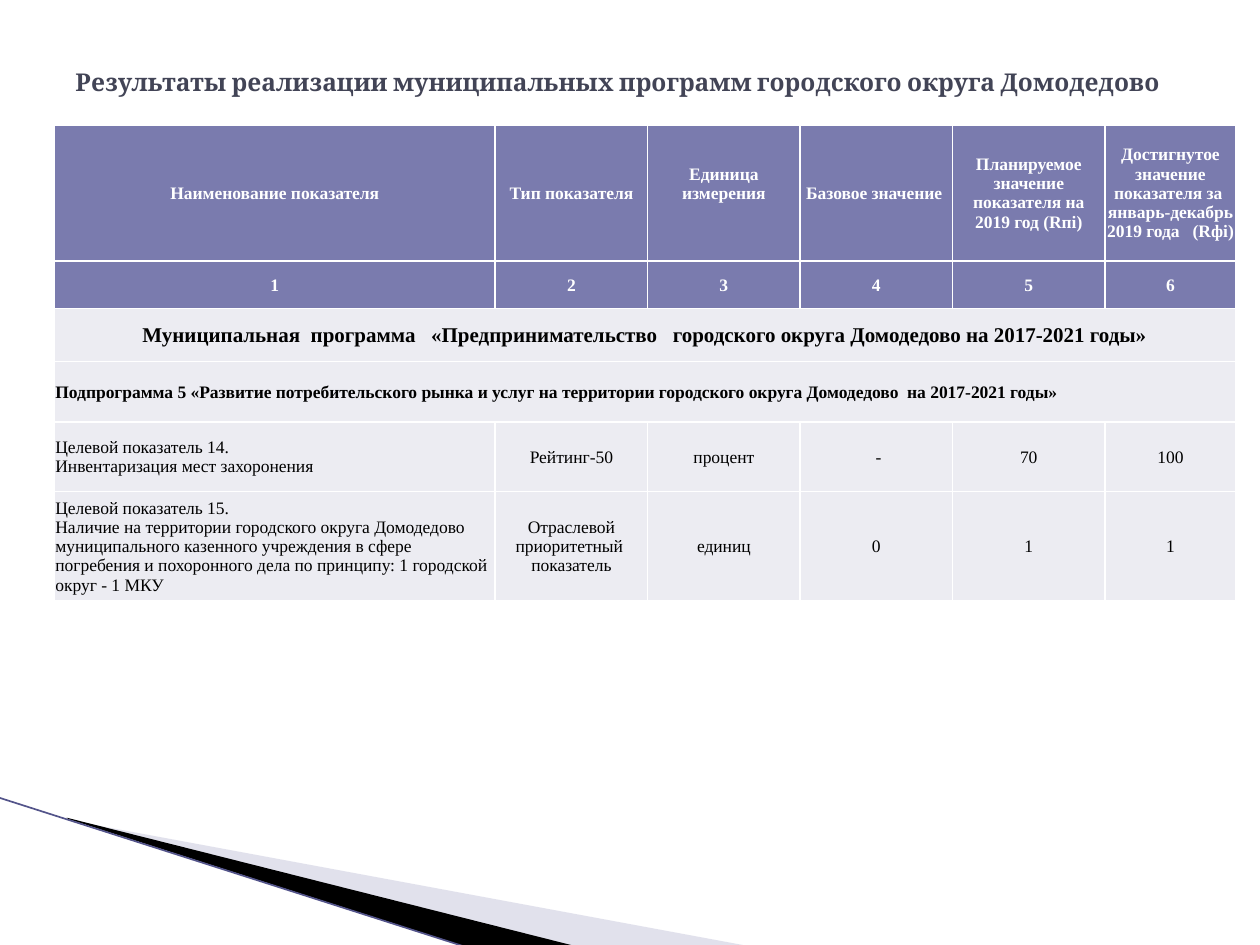
"""Build a slide with the results table of the municipal programmes."""
from dataclasses import dataclass

from lxml import etree
from pptx import Presentation
from pptx.dml.color import RGBColor
from pptx.enum.shapes import MSO_CONNECTOR
from pptx.enum.text import MSO_ANCHOR, PP_ALIGN
from pptx.oxml.ns import qn
from pptx.util import Inches, Pt

STRAIGHT = MSO_CONNECTOR.STRAIGHT
MIDDLE = MSO_ANCHOR.MIDDLE
LEFT, CENTER = PP_ALIGN.LEFT, PP_ALIGN.CENTER

COLUMN_WIDTHS = [3.5, 1.21, 1.21, 1.21, 1.21, 1.04]
ROW_HEIGHTS = [1.08, 0.38, 0.42, 0.48, 0.55, 0.87]
HEADINGS = [
    "Наименование показателя",
    "Тип показателя",
    "Единица измерения",
    "Базовое значение ",
    "Планируемое значение показателя на 2019 год (Rпi)",
    "Достигнутое значение показателя за  январь-декабрь 2019 года   (Rфi)",
]
PROGRAMME = ("Муниципальная  программа   «Предпринимательство   "
             "городского округа Домодедово на 2017-2021 годы»")
SUBPROGRAMME = ("Подпрограмма 5 «Развитие потребительского рынка и услуг на территории "
                "городского округа Домодедово  на 2017-2021 годы»")
INDICATORS = [
    ["Целевой показатель 14.\nИнвентаризация мест захоронения",
     "Рейтинг-50", "процент", " -", "70", "100"],
    ["Целевой показатель 15.\nНаличие на территории городского округа Домодедово "
     "муниципального казенного учреждения в сфере погребения и похоронного дела "
     "по принципу: 1 городской округ - 1 МКУ",
     "Отраслевой приоритетный  показатель", "единиц", "0", "1", "1"],
]


@dataclass(frozen=True)
class Theme:
    """Colours, fonts and type sizes of the slide."""
    title_font: str = "Cambria"
    table_font: str = "Times New Roman"
    title_size: int = 14
    programme_size: int = 12
    table_size: int = 10
    title: str = "424456"
    header: str = "7A7BAE"
    body: str = "ECECF2"
    white: str = "FFFFFF"
    black: str = "000000"
    pale: str = "B6B6D1"
    edge: str = "53548A"


class SlideBuilder:
    """Hold the theme and the current slide, and draw each kind of element."""

    def __init__(self, slide, theme):
        """Keep the slide and the theme."""
        self.slide = slide
        self.theme = theme

    def set_text(self, text_frame, text, font, size, color, bold, align=LEFT):
        """Fill a text frame and format its paragraphs and runs."""
        text_frame.text = text
        text_frame.word_wrap = True
        for paragraph in text_frame.paragraphs:
            paragraph.alignment = align
            for run in paragraph.runs:
                run.font.name = font
                run.font.size = Pt(size)
                run.font.bold = bold
                run.font.color.rgb = RGBColor.from_string(color)

    def title(self, text, left, top, width, height):
        """Add the slide title."""
        shape = self.slide.shapes.add_textbox(*map(Inches, (left, top, width, height)))
        shape.text_frame.vertical_anchor = MIDDLE
        self.set_text(shape.text_frame, text, self.theme.title_font,
                      self.theme.title_size, self.theme.title, True)

    def wedge(self, points, color, opacity=100):
        """Add a filled outline through the points."""
        corners = [(Inches(x), Inches(y)) for x, y in points]
        builder = self.slide.shapes.build_freeform(*corners[0])
        builder.add_line_segments(corners[1:], close=True)
        shape = builder.convert_to_shape()
        shape.shadow.inherit = False
        shape.line.fill.background()
        shape.fill.solid()
        shape.fill.fore_color.rgb = RGBColor.from_string(color)
        if opacity < 100:
            fill_color = shape._element.spPr.find(".//" + qn("a:srgbClr"))
            etree.SubElement(fill_color, qn("a:alpha"), val=str(opacity * 1000))

    def line(self, start, end, color, width):
        """Add a straight line."""
        ends = map(Inches, (*start, *end))
        connector = self.slide.shapes.add_connector(STRAIGHT, *ends)
        connector.line.color.rgb = RGBColor.from_string(color)
        connector.line.width = Pt(width)
        etree.SubElement(connector._element.spPr, qn("a:effectLst"))

    def table(self, left, top, column_widths, row_heights):
        """Add an empty table with the given grid."""
        frame = self.slide.shapes.add_table(
            len(row_heights), len(column_widths), Inches(left), Inches(top),
            Inches(sum(column_widths)), Inches(sum(row_heights)))
        table = frame.table
        for column, width in zip(table.columns, column_widths):
            column.width = Inches(width)
        for row, height in zip(table.rows, row_heights):
            row.height = Inches(height)
        return table

    def cell(self, cell, text, fill, color, bold, align=CENTER, size=None):
        """Fill in one table cell and style its fill, margins and borders."""
        cell.margin_left = cell.margin_right = cell.margin_top = Inches(0.01)
        cell.margin_bottom = 0
        cell.vertical_anchor = MIDDLE
        self.set_text(cell.text_frame, text, self.theme.table_font,
                      size or self.theme.table_size, color, bold, align)
        properties = cell._tc.get_or_add_tcPr()
        for side in ("a:lnL", "a:lnR", "a:lnT", "a:lnB"):
            border = etree.SubElement(properties, qn(side), w=str(Pt(1)))
            solid = etree.SubElement(border, qn("a:solidFill"))
            etree.SubElement(solid, qn("a:srgbClr"), val=self.theme.white)
        cell.fill.solid()
        cell.fill.fore_color.rgb = RGBColor.from_string(fill)


def main():
    """Compose the slide and save the presentation."""
    theme = Theme()
    presentation = Presentation()
    presentation.slide_width = Inches(10)
    presentation.slide_height = Inches(7.5)
    slide = presentation.slides.add_slide(presentation.slide_layouts[6])
    builder = SlideBuilder(slide, theme)

    builder.wedge([(0.55, 6.51), (5.95, 7.51), (4.56, 7.51), (0.55, 6.5)], theme.pale, 40)
    builder.wedge([(0.53, 6.49), (4.57, 7.51), (3.72, 7.52), (0.54, 6.5)], theme.black)
    builder.line((-0.01, 6.33), (3.71, 7.52), theme.edge, 0.95)
    builder.title("Результаты реализации муниципальных программ городского округа Домодедово",
                  0.5, 0.3, 9, 0.69)

    table = builder.table(0.43, 0.99, COLUMN_WIDTHS, ROW_HEIGHTS)
    numbers = [str(number) for number in range(1, len(HEADINGS) + 1)]
    for row, texts in enumerate([HEADINGS, numbers]):
        for column, text in enumerate(texts):
            builder.cell(table.cell(row, column), text, theme.header, theme.white, True)
    table.cell(0, HEADINGS.index("Единица измерения")).margin_bottom = Inches(0.15)

    bands = [(PROGRAMME, CENTER, theme.programme_size), (SUBPROGRAMME, LEFT, theme.table_size)]
    for row, (text, align, size) in enumerate(bands, start=2):
        for column in range(len(COLUMN_WIDTHS)):
            builder.cell(table.cell(row, column), "" if column else text,
                         theme.body, theme.black, True, align, size)
        table.cell(row, 0).merge(table.cell(row, len(COLUMN_WIDTHS) - 1))

    for row, texts in enumerate(INDICATORS, start=4):
        for column, text in enumerate(texts):
            builder.cell(table.cell(row, column), text, theme.body, theme.black, False,
                         CENTER if column else LEFT)

    presentation.save("out.pptx")


if __name__ == "__main__":
    main()
